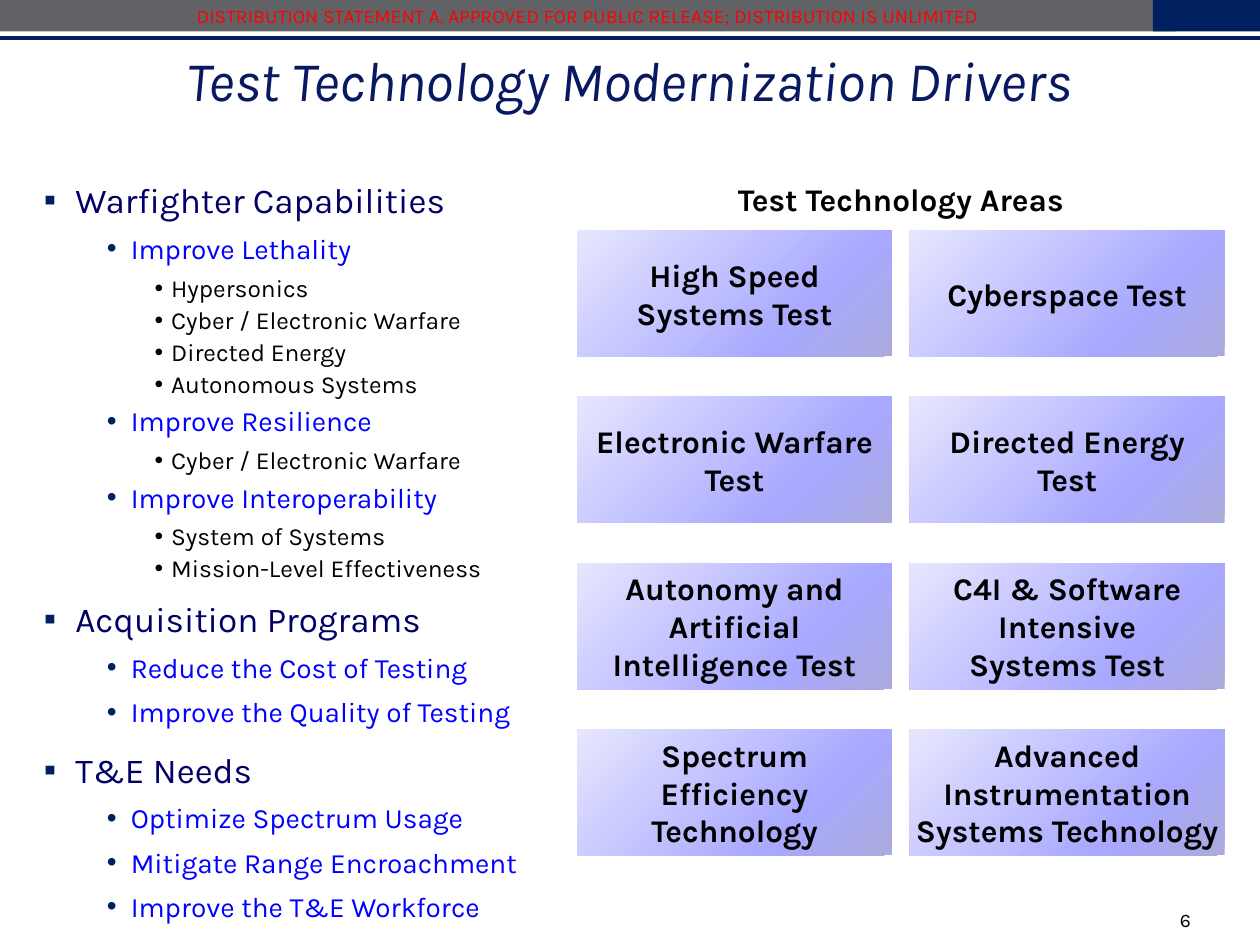
from copy import deepcopy

from lxml import etree
from pptx import Presentation
from pptx import util as u
from pptx.dml import color
from pptx.enum import shapes, text
from pptx.oxml import ns

WIDTH, HEIGHT = 10, 7.5
FONT = "Karla"
NAVY, BLACK = "002060", "000000"
LEFT, CENTER, RIGHT = (text.PP_ALIGN.LEFT, text.PP_ALIGN.CENTER,
                       text.PP_ALIGN.RIGHT)
TOP, MIDDLE = text.MSO_ANCHOR.TOP, text.MSO_ANCHOR.MIDDLE

# Grid of technology areas: left, top, cell size and pitch
GRID_X, GRID_Y = 4.58, 1.83
CELL_W, CELL_H = 2.5, 1
STEP_X, STEP_Y = 2.64, 1.32

AREAS = [
    ("High Speed\nSystems Test", "Cyberspace Test"),
    ("Electronic Warfare\nTest", "Directed Energy\nTest"),
    ("Autonomy and\nArtificial\nIntelligence Test",
     "C4I & Software\nIntensive\nSystems Test"),
    ("Spectrum\nEfficiency\nTechnology",
     "Advanced\nInstrumentation\nSystems Technology"),
]
STOPS = [(0, "AAAADC"), (0.29, "A8A8FF"), (1, "E6E6FF")]

# Outline levels: margin, hang, mark, mark colour, then text format
LEVELS = [
    (0.25, 0.25, "▪", NAVY, dict(size=20, tint="000066", before=12, after=3)),
    (0.69, 0.19, "•", NAVY, dict(size=16, tint="0000FF", before=6, after=3)),
    (1.01, 0.13, "•", BLACK, dict(size=14, before=4)),
]
DRIVERS = [
    (0, "Warfighter Capabilities"),
    (1, "Improve Lethality"),
    (2, "Hypersonics"),
    (2, "Cyber / Electronic Warfare"),
    (2, "Directed Energy"),
    (2, "Autonomous Systems"),
    (1, "Improve Resilience"),
    (2, "Cyber / Electronic Warfare"),
    (1, "Improve Interoperability"),
    (2, "System of Systems"),
    (2, "Mission-Level Effectiveness"),
    (0, "Acquisition Programs"),
    (1, "Reduce the Cost of Testing"),
    (1, "Improve the Quality of Testing"),
    (0, "T&E Needs"),
    (1, "Optimize Spectrum Usage"),
    (1, "Mitigate Range Encroachment"),
    (1, "Improve the T&E Workforce"),
]


def rgb(code):
    return color.RGBColor.from_string(code)


def write(para, words, size=18, tint=BLACK, bold=False, italic=False,
          align=LEFT, lines=None, before=0, after=0):
    para.text = words
    para.alignment = align
    para.line_spacing = lines
    para.space_before, para.space_after = u.Pt(before), u.Pt(after)
    for run in para.runs:
        font = run.font
        font.name, font.size = FONT, u.Pt(size)
        font.bold, font.italic = bold, italic
        font.color.rgb = rgb(tint)


def setup(frame, anchor=TOP, wrap=True, inset=None):
    frame.word_wrap = wrap
    frame.vertical_anchor = anchor
    if inset is not None:
        frame.margin_left = frame.margin_right = u.Inches(inset)
        frame.margin_top = frame.margin_bottom = u.Inches(inset)
    return frame


def label(slide, area, **frame):
    box = slide.shapes.add_textbox(*map(u.Inches, area))
    return setup(box.text_frame, **frame)


def block(slide, area, fill=None):
    box = slide.shapes.add_shape(shapes.MSO_SHAPE.RECTANGLE,
                                 *map(u.Inches, area))
    box.shadow.inherit = False
    box.line.fill.background()
    if fill:
        box.fill.solid()
        box.fill.fore_color.rgb = rgb(fill)
    return box


def shade(box):
    """Three-stop gradient, dark at the lower right corner."""
    box.fill.gradient()
    box.fill.gradient_angle = 135
    stops = box.element.spPr.find(".//" + ns.qn("a:gsLst"))
    stops.append(deepcopy(stops[-1]))
    for stop, (place, tint) in zip(box.fill.gradient_stops, STOPS):
        stop.color.rgb = rgb(tint)
        stop.position = place


def rule(slide, y):
    line = slide.shapes.add_connector(
        shapes.MSO_CONNECTOR.STRAIGHT, 0, u.Inches(y),
        u.Inches(WIDTH), u.Inches(y))
    line.line.color.rgb = rgb(NAVY)
    line.line.width = u.Pt(2.25)
    etree.SubElement(line.element.spPr, ns.qn("a:effectLst"))


def bullet(para, margin, hang, mark, tint):
    props = para._p.get_or_add_pPr()
    props.set("marL", str(u.Inches(margin)))
    props.set("indent", str(-u.Inches(hang)))
    shade_el = etree.SubElement(props, ns.qn("a:buClr"))
    etree.SubElement(shade_el, ns.qn("a:srgbClr"), val=tint)
    etree.SubElement(props, ns.qn("a:buFont"), typeface="Arial")
    etree.SubElement(props, ns.qn("a:buChar"), char=mark)


def header(slide):
    bar = block(slide, (0, 0, 9.33, 0.25), "616265")
    write(setup(bar.text_frame, MIDDLE).paragraphs[0],
          "DISTRIBUTION STATEMENT A. APPROVED FOR PUBLIC RELEASE; "
          "DISTRIBUTION IS UNLIMITED",
          size=11, tint="FF0000", align=CENTER)
    block(slide, (9.15, 0, 0.85, 0.25), NAVY)
    rule(slide, HEIGHT * 0.04)
    write(label(slide, (0, 0.37, WIDTH, 0.61)).paragraphs[0],
          "Test Technology Modernization Drivers",
          size=32, tint="081861", italic=True, align=CENTER, lines=0.9)


def outline(slide):
    frame = label(slide, (0.25, 1.42, 4.5, 5.75))
    for i, (level, words) in enumerate(DRIVERS):
        para = frame.add_paragraph() if i else frame.paragraphs[0]
        *marks, style = LEVELS[level]
        bullet(para, *marks)
        write(para, words, lines=0.85, **style)
        if i == 0:
            para.space_before = u.Pt(0)


def areas(slide):
    wide = STEP_X + CELL_W
    head = label(slide, (GRID_X, 1.33, wide, 0.49), anchor=MIDDLE, inset=0)
    write(head.paragraphs[0], "Test Technology Areas",
          bold=True, align=CENTER)
    for row, names in enumerate(AREAS):
        for col, name in enumerate(names):
            box = block(slide, (GRID_X + col * STEP_X, GRID_Y + row * STEP_Y,
                                CELL_W, CELL_H))
            shade(box)
            frame = setup(box.text_frame, MIDDLE, wrap=False)
            write(frame.paragraphs[0], name, bold=True, align=CENTER)


def main():
    deck = Presentation()
    deck.slide_width, deck.slide_height = u.Inches(WIDTH), u.Inches(HEIGHT)
    slide = deck.slides.add_slide(deck.slide_layouts[6])
    header(slide)
    outline(slide)
    areas(slide)
    # Page number
    write(label(slide, (8.76, 7.16, 0.79, 0.29)).paragraphs[0], "6",
          size=11, align=RIGHT)
    deck.save("out.pptx")


if __name__ == "__main__":
    main()
